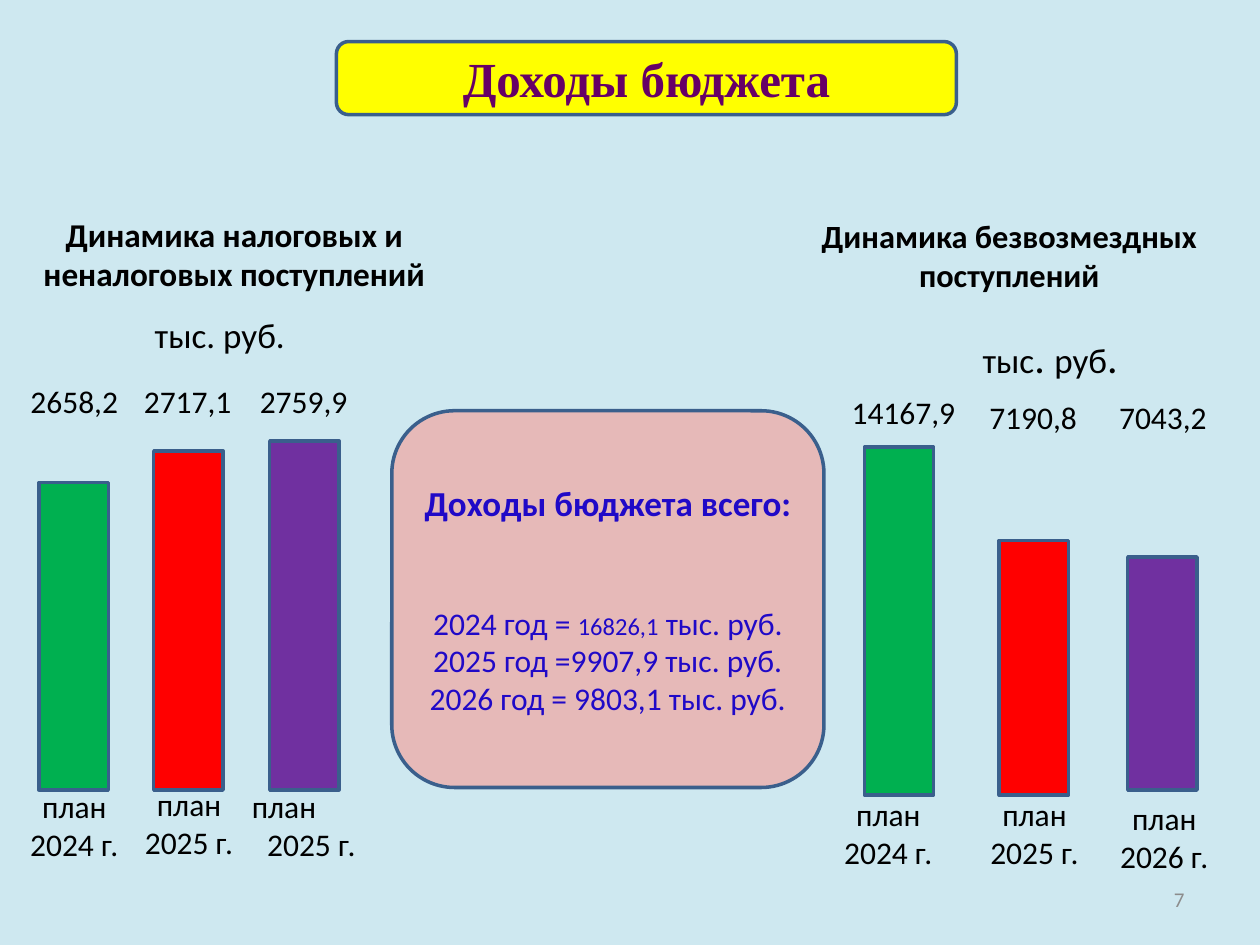
"""Build the budget revenue slide with two bar groups and a totals panel."""
from dataclasses import dataclass

import pptx
import pptx.dml.color
import pptx.enum.shapes
import pptx.enum.text
import pptx.util

Inches = pptx.util.Inches
Shape = pptx.enum.shapes.MSO_SHAPE
Align = pptx.enum.text.PP_ALIGN
Anchor = pptx.enum.text.MSO_ANCHOR


@dataclass(frozen=True)
class Theme:
    background: str = "CEE8F0"
    outline: str = "3A5F8C"
    text: str = "000000"
    muted: str = "8C8C8C"
    title: str = "660066"
    title_fill: str = "FFFF00"
    total: str = "2009C7"
    total_fill: str = "E6B9B8"
    bars: tuple = ("00B050", "FF0000", "7030A0")
    font: str = "Calibri"
    title_font: str = "Times New Roman"
    title_size: float = 28
    unit_size: float = 20
    body_size: float = 18
    small_size: float = 14
    number_size: float = 12


theme = Theme()


def write(shape, lines, size=theme.body_size, color=theme.text, bold=False,
          font=theme.font, align=Align.CENTER, anchor=Anchor.MIDDLE):
    frame = shape.text_frame
    frame.word_wrap = True
    frame.vertical_anchor = anchor
    for index, line in enumerate(lines):
        paragraph = frame.paragraphs[0] if index == 0 else frame.add_paragraph()
        paragraph.alignment = align
        for text in line if isinstance(line, tuple) else (line,):
            run = paragraph.add_run()
            run.text = text
            run.font.size = pptx.util.Pt(size)
            run.font.name = font
            run.font.bold = bold
            run.font.color.rgb = pptx.dml.color.RGBColor.from_string(color)
    return frame


def add_block(kind, left, top, width, height, fill):
    shape = slide.shapes.add_shape(
        kind, Inches(left), Inches(top), Inches(width), Inches(height))
    shape.shadow.inherit = False
    shape.fill.solid()
    shape.fill.fore_color.rgb = pptx.dml.color.RGBColor.from_string(fill)
    shape.line.color.rgb = pptx.dml.color.RGBColor.from_string(theme.outline)
    shape.line.width = pptx.util.Pt(2)
    return shape


presentation = pptx.Presentation()
presentation.slide_width = Inches(10)
presentation.slide_height = Inches(7.5)
slide = presentation.slides.add_slide(presentation.slide_layouts[6])
slide.background.fill.solid()
slide.background.fill.fore_color.rgb = pptx.dml.color.RGBColor.from_string(theme.background)

title = add_block(Shape.ROUNDED_RECTANGLE, 2.67, 0.33, 4.92, 0.58, theme.title_fill)
write(title, ["Доходы бюджета"], theme.title_size, theme.title, True, theme.title_font)

headings = [
    (0.08, 3.56, 19, ["Динамика налоговых и неналоговых поступлений"]),
    (6.24, 3.54, 18.5, ["Динамика безвозмездных", "поступлений"]),
]
for left, width, size, lines in headings:
    heading = slide.shapes.add_textbox(Inches(left), Inches(1.68), Inches(width), Inches(0.7))
    write(heading, lines, size, bold=True, anchor=Anchor.BOTTOM)

tax_unit = slide.shapes.add_textbox(Inches(1.13), Inches(2.44), Inches(2), Inches(0.43))
write(tax_unit, ["тыс. руб."], theme.unit_size, align=Align.LEFT, anchor=Anchor.TOP)

grant_unit = slide.shapes.add_textbox(Inches(7), Inches(2.58), Inches(2.67), Inches(0.5))
grant_frame = write(grant_unit, [("тыс", ". ", "руб", ".")], theme.unit_size, anchor=Anchor.TOP)
for run in grant_frame.paragraphs[0].runs[1::2]:
    run.font.size = pptx.util.Pt(24)

bar_width = 0.55
bar_groups = [
    [(0.31, 3.83, 6.27), (1.22, 3.58, 6.27), (2.14, 3.5, 6.27)],
    [(6.86, 3.55, 6.31), (7.93, 4.29, 6.31), (8.95, 4.42, 6.27)],
]
for group in bar_groups:
    for (left, top, bottom), color in zip(group, theme.bars):
        add_block(Shape.RECTANGLE, left, top, bar_width, bottom - top, color)

values = [
    ("2658,2", 0.59, 3.18), ("2717,1", 1.49, 3.18), ("2759,9", 2.41, 3.18),
    ("14167,9", 7.17, 3.27), ("7190,8", 8.2, 3.31), ("7043,2", 9.23, 3.31),
]
for value, center, middle in values:
    label = slide.shapes.add_textbox(
        Inches(center - 0.57), Inches(middle - 0.2), Inches(1.14), Inches(0.4))
    write(label, [value])

plans = [
    ("2024", 0.59, 6.55), ("2025", 1.5, 6.53), ("2025", 2.41, 6.55),
    ("2024", 7.05, 6.61), ("2025", 8.21, 6.61), ("2026", 9.24, 6.64),
]
plan_frames = []
for year, center, middle in plans:
    label = slide.shapes.add_textbox(
        Inches(center - 0.51), Inches(middle - 0.35), Inches(1.02), Inches(0.7))
    plan_frames.append(write(label, ["план", f"{year} г."]))
shifted_plan = plan_frames[2]
shifted_plan.paragraphs[0].alignment = Align.LEFT
shifted_plan.paragraphs[1].alignment = Align.RIGHT

total = add_block(Shape.ROUNDED_RECTANGLE, 3.11, 3.26, 3.43, 2.99, theme.total_fill)
total_frame = write(total, [
    "Доходы бюджета всего:",
    ("2024 год = ", "16826,1", " тыс. руб."),
    "2025 год =9907,9 тыс. руб.",
    "2026 год = 9803,1 тыс. руб.",
], color=theme.total)
total_heading, first_year = total_frame.paragraphs[:2]
total_heading.runs[0].font.size = pptx.util.Pt(theme.unit_size)
total_heading.runs[0].font.bold = True
first_year.space_before = pptx.util.Pt(46)
first_year.runs[1].font.size = pptx.util.Pt(theme.small_size)

page_number = slide.shapes.add_textbox(Inches(7.17), Inches(6.94), Inches(2.33), Inches(0.4))
write(page_number, ["7"], theme.number_size, theme.muted, align=Align.RIGHT)

presentation.save("out.pptx")
